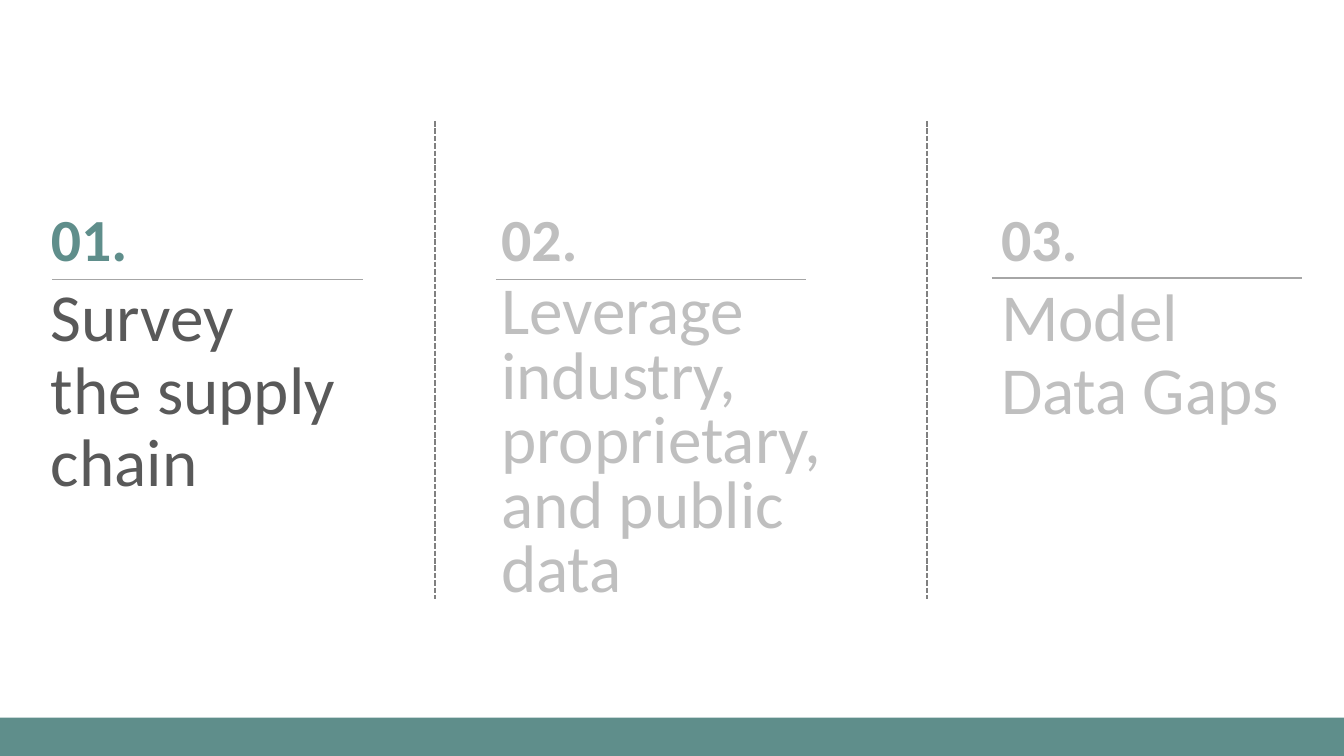
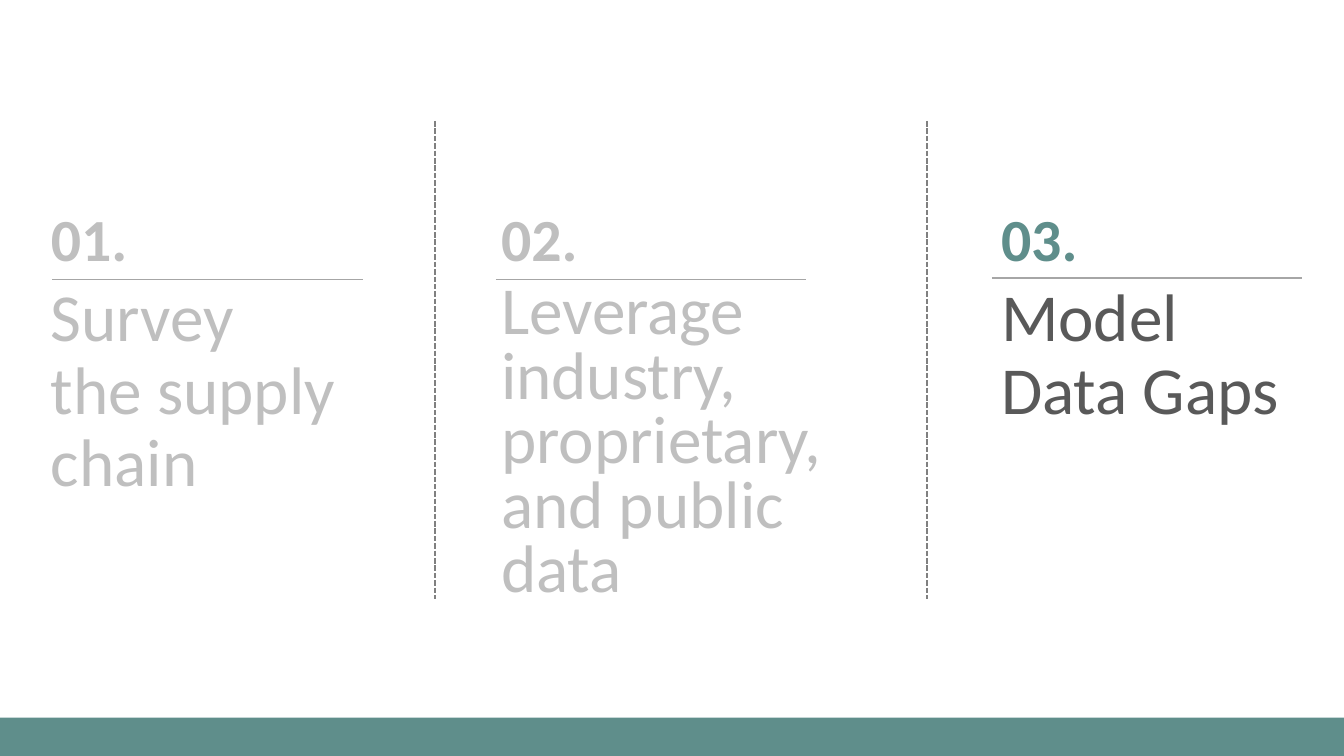
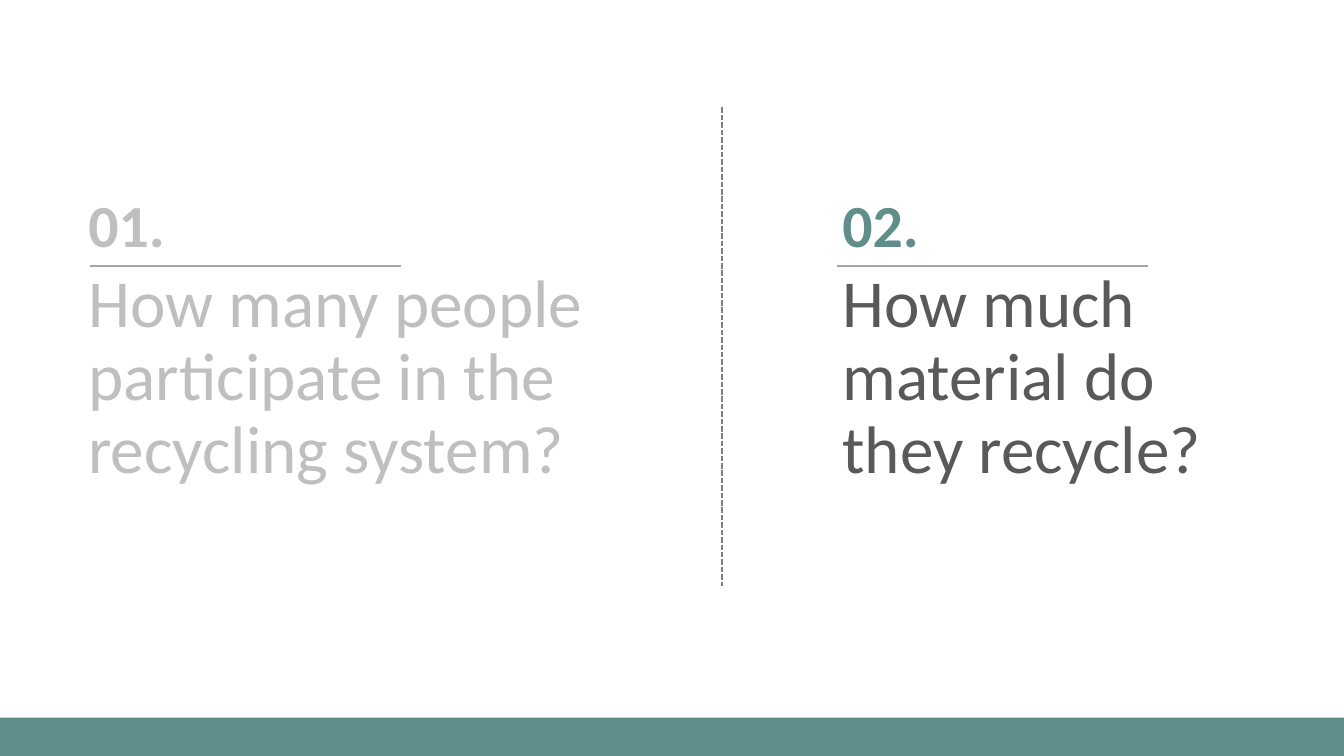
import typing

import pptx
import pptx.dml.color
import pptx.enum.dml
import pptx.enum.shapes
import pptx.enum.text
import pptx.oxml.ns
import pptx.util

Inches = pptx.util.Inches

SLIDE_WIDTH = 10
SLIDE_HEIGHT = SLIDE_WIDTH * 9 / 16
BAND_TOP = 5.34
RULE_LENGTH = 2.31
DIVIDER_LENGTH = 3.56

TEAL = "5F8E8B"
DARK = "595959"
FADED = "BFBFBF"
RULE_GREY = "A6A6A6"
DIVIDER_GREY = "808080"


class Step(typing.NamedTuple):
    left: float
    rule_left: float
    width: float
    height: float
    wording: str
    line_spacing: float = 0.9
    rule_drop: float = 0.57


def rgb(hex_colour):
    return pptx.dml.color.RGBColor.from_string(hex_colour)


class Deck:
    FONT = "Calibri"

    def __init__(self):
        self.presentation = pptx.Presentation()
        self.presentation.slide_width = Inches(SLIDE_WIDTH)
        self.presentation.slide_height = Inches(SLIDE_HEIGHT)
        self.slide = None

    def add_slide(self):
        blank = self.presentation.slide_layouts[6]
        self.slide = self.presentation.slides.add_slide(blank)
        self.band()

    def band(self):
        footer = self.slide.shapes.add_shape(
            pptx.enum.shapes.MSO_SHAPE.RECTANGLE, 0, Inches(BAND_TOP),
            Inches(SLIDE_WIDTH), Inches(SLIDE_HEIGHT - BAND_TOP))
        footer.shadow.inherit = False
        footer.fill.solid()
        footer.fill.fore_color.rgb = rgb(TEAL)
        footer.line.fill.background()

    def line(self, x1, y1, x2, y2, colour, dash=None):
        connector = self.slide.shapes.add_connector(
            pptx.enum.shapes.MSO_CONNECTOR.STRAIGHT,
            Inches(x1), Inches(y1), Inches(x2), Inches(y2))
        connector.line.color.rgb = rgb(colour)
        connector.line.width = pptx.util.Pt(1)
        if dash:
            connector.line.dash_style = dash
        properties = connector._element.spPr
        properties.append(properties.makeelement(pptx.oxml.ns.qn("a:effectLst"), {}))

    def text(self, left, top, width, height, wording, size, colour,
             bold=False, line_spacing=0.9):
        frame = self.slide.shapes.add_textbox(
            Inches(left), Inches(top), Inches(width), Inches(height)).text_frame
        frame.word_wrap = True
        frame.vertical_anchor = pptx.enum.text.MSO_ANCHOR.TOP
        paragraph = frame.paragraphs[0]
        paragraph.text = wording
        paragraph.line_spacing = line_spacing
        paragraph.space_before = pptx.util.Pt(10)
        paragraph.font.name = self.FONT
        paragraph.font.size = pptx.util.Pt(size)
        paragraph.font.bold = bold
        paragraph.font.color.rgb = rgb(colour)

    def divider(self, x, top):
        self.line(x, top, x, top + DIVIDER_LENGTH, DIVIDER_GREY,
                  pptx.enum.dml.MSO_LINE.SQUARE_DOT)

    def step(self, number, step, top, active):
        """Draw a numbered heading, its rule and its wording; fade it unless active."""
        self.text(step.left, top + 0.55, step.width, step.height, step.wording,
                  36, DARK if active else FADED, line_spacing=step.line_spacing)
        self.text(step.left, top, 2.93, 0.83, f"{number:02}.",
                  32, TEAL if active else FADED, bold=True)
        rule_y = top + step.rule_drop
        self.line(step.rule_left, rule_y, step.rule_left + RULE_LENGTH, rule_y, RULE_GREY)

    def agenda(self, steps, active_number, dividers, top):
        """Add a slide of steps side by side with one of them highlighted."""
        self.add_slide()
        for x in dividers:
            self.divider(x, top - 0.61)
        for number, step in enumerate(steps, start=1):
            self.step(number, step, top, number == active_number)


def main():
    survey = Step(0.28, 0.39, 2.93, 3.57, "Survey \vthe supply chain")
    leverage = Step(3.63, 3.69, 3.07, 2.74,
                    "Leverage industry, proprietary, and public data", 0.8)
    model = Step(7.35, 7.38, 2.28, 2.61, "Model Data Gaps", rule_drop=0.56)
    questions = [
        Step(0.56, 0.67, 4.41, 1.77,
             "How many people participate in the recycling system?"),
        Step(6.17, 6.23, 3.47, 2.34, "How much material do they recycle?"),
    ]

    deck = Deck()
    for active_number, model_height in ((1, 2.61), (3, 3.57)):
        method = [survey, leverage, model._replace(height=model_height)]
        deck.agenda(method, active_number, dividers=(3.24, 6.9), top=1.51)
    deck.agenda(questions, 2, dividers=(5.37,), top=1.41)
    deck.presentation.save("out.pptx")


if __name__ == "__main__":
    main()
